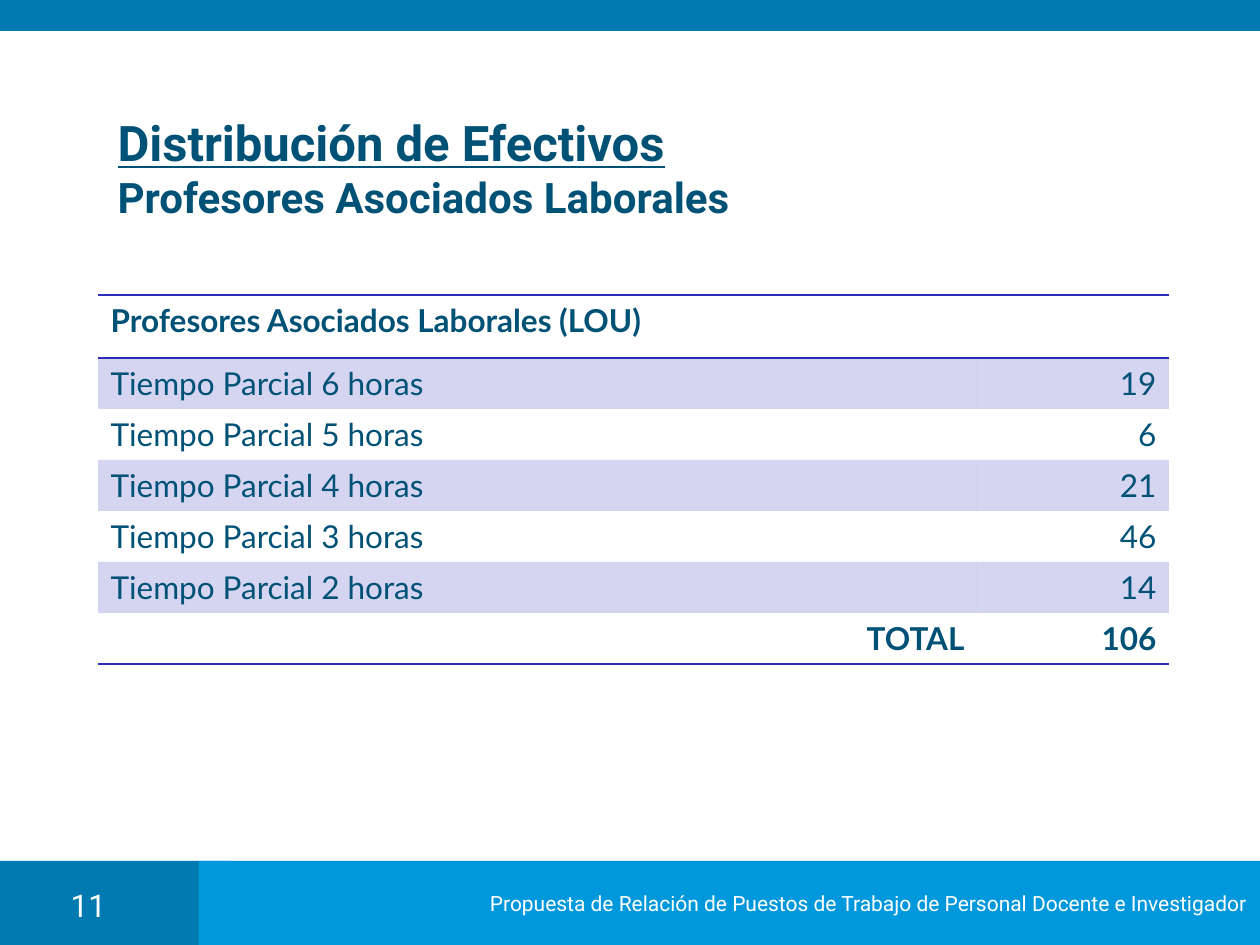
from lxml import etree
from pptx import Presentation
from pptx.dml.color import RGBColor
from pptx.enum.shapes import MSO_SHAPE
from pptx.enum.text import MSO_ANCHOR, MSO_AUTO_SIZE, PP_ALIGN
from pptx.oxml.ns import qn
from pptx.util import Pt

PX = 914400 // 126
RECTANGLE = MSO_SHAPE.RECTANGLE
MIDDLE = MSO_ANCHOR.MIDDLE
NO_AUTOFIT = MSO_AUTO_SIZE.NONE
LEFT, CENTER, RIGHT = PP_ALIGN.LEFT, PP_ALIGN.CENTER, PP_ALIGN.RIGHT
NO_STYLE = "{2D5ABB26-0587-4C30-8999-92F81FD0307C}"

WHITE, NAVY, RULE = "FFFFFF", "005176", "2D2DB9"
DARK_BLUE, BRIGHT_BLUE = "007AB1", "0098DC"

HEADING = "Profesores Asociados Laborales (LOU)"
HOURS = [(6, 19), (5, 6), (4, 21), (3, 46), (2, 14)]


def scaled(*lengths):
    return [length * PX for length in lengths]


def colour(value):
    return RGBColor.from_string(value)


def add_span(para, text, size, font, text_colour, bold=False, underline=False):
    span = para.add_run()
    span.text = text
    span.font.size = Pt(size)
    span.font.name = font
    span.font.bold = bold
    span.font.underline = underline
    span.font.color.rgb = colour(text_colour)


def add_bar(page, place, fill):
    bar = page.shapes.add_shape(RECTANGLE, *scaled(*place))
    bar.shadow.inherit = False
    bar.fill.solid()
    bar.fill.fore_color.rgb = colour(fill)
    bar.line.fill.background()
    return bar


def add_footer(page, text):
    frame = add_bar(page, (199, 861, 1061, 84), BRIGHT_BLUE).text_frame
    frame.word_wrap = False
    frame.vertical_anchor = MIDDLE
    para = frame.paragraphs[0]
    para.alignment = RIGHT
    add_span(para, text, 12, "Roboto", WHITE)


def add_page_number(page, number):
    box = page.shapes.add_textbox(*scaled(44, 880, 89, 40))
    box.text_frame.word_wrap = True
    para = box.text_frame.paragraphs[0]
    para.alignment = CENTER
    add_span(para, number, 18, "Roboto", WHITE)


def set_title(page, heading, subheading):
    title = page.shapes.title
    title.left, title.top, title.width, title.height = scaled(105, 129, 1052, 77)
    frame = title.text_frame
    frame.auto_size = NO_AUTOFIT
    frame.vertical_anchor = MIDDLE
    para = frame.paragraphs[0]
    para.alignment = LEFT
    add_span(para, heading, 28, "Roboto", NAVY, bold=True, underline=True)
    para.add_line_break()
    add_span(para, subheading, 24, "Roboto", NAVY, bold=True)


def add_border(cell, side):
    properties = cell._tc.get_or_add_tcPr()
    line = etree.SubElement(properties, qn(f"a:ln{side}"), w=str(Pt(1)))
    fill = etree.SubElement(line, qn("a:solidFill"))
    etree.SubElement(fill, qn("a:srgbClr"), val=RULE)


def fill_cell(cell, shaded):
    if not shaded:
        cell.fill.background()
        return
    cell.fill.solid()
    cell.fill.fore_color.rgb = colour(RULE)
    tint = cell._tc.tcPr.find(f"{qn('a:solidFill')}/{qn('a:srgbClr')}")
    etree.SubElement(tint, qn("a:alpha"), val="20000")


def add_staff_table(page):
    total = sum(count for _, count in HOURS)
    rows = [(HEADING, "")]
    rows += [(f"Tiempo Parcial {hours} horas", str(count)) for hours, count in HOURS]
    rows.append(("TOTAL", str(total)))
    last = len(rows) - 1

    frame = page.shapes.add_table(len(rows), 2, *scaled(98, 295, 1071, 369))
    table = frame.table
    table._tbl.tblPr.find(qn("a:tableStyleId")).text = NO_STYLE
    for column, width in zip(table.columns, scaled(879, 192)):
        column.width = width

    for index, texts in enumerate(rows):
        table.rows[index].height = (63 if index == 0 else 51) * PX
        borders = {0: "TB", last: "B"}.get(index, "")
        for position, text in enumerate(texts):
            cell = table.cell(index, position)
            for side in borders:
                add_border(cell, side)
            fill_cell(cell, shaded=index % 2 == 1)
            para = cell.text_frame.paragraphs[0]
            para.alignment = RIGHT if position == 1 or index == last else LEFT
            if text:
                add_span(para, text, 18, "Lato", NAVY, bold=index in (0, last))


def main():
    deck = Presentation()
    deck.slide_width, deck.slide_height = scaled(1260, 945)
    page = deck.slides.add_slide(deck.slide_layouts[5])
    add_bar(page, (0, 861, 231, 84), DARK_BLUE)
    add_footer(
        page,
        "Propuesta de Relación de Puestos de Trabajo de Personal Docente e Investigador",
    )
    add_bar(page, (0, 0, 1260, 31), DARK_BLUE)
    set_title(page, "Distribución de Efectivos", "Profesores Asociados Laborales")
    add_staff_table(page)
    add_page_number(page, "11")
    deck.save("out.pptx")


if __name__ == "__main__":
    main()
